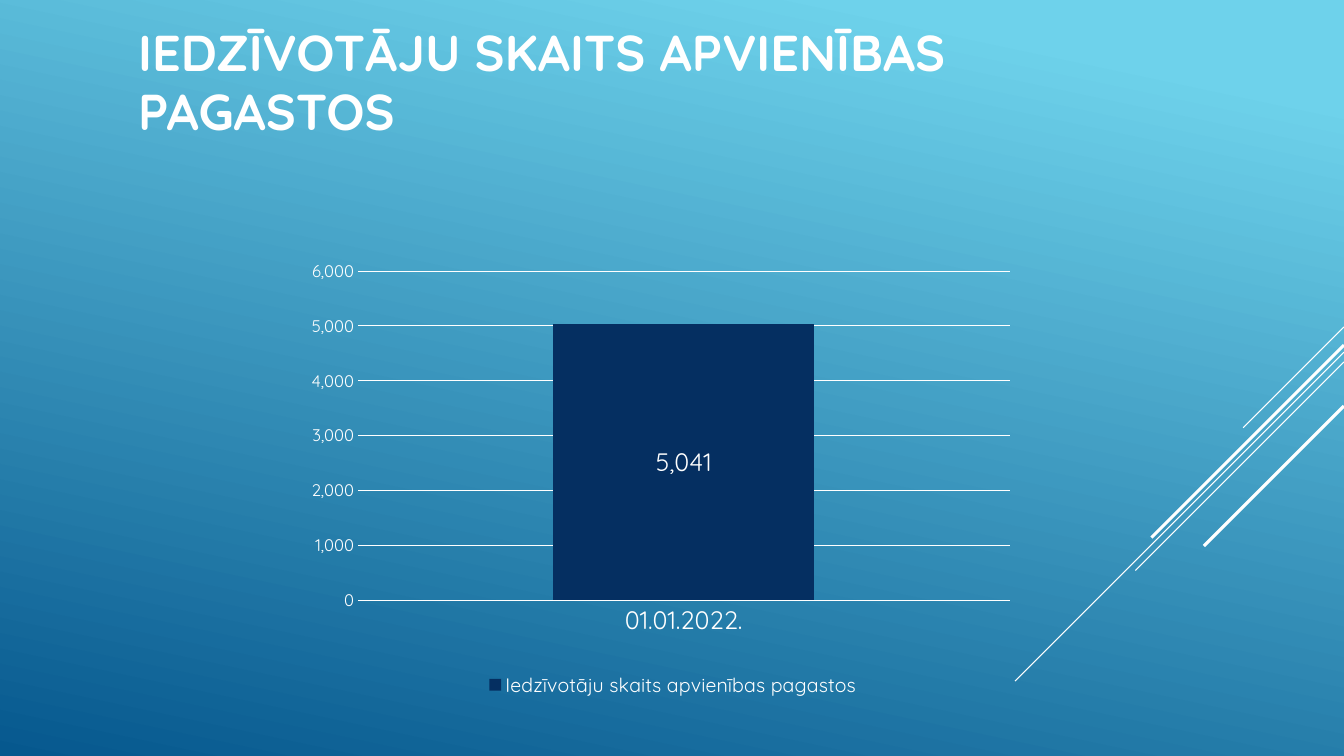
from lxml import etree
from pptx import Presentation
from pptx import util as u
from pptx.chart import data as chart_data
from pptx.dml import color
from pptx.enum import chart as charts, shapes, text
from pptx.oxml import ns

WHITE, NAVY = "FFFFFF", "052F61"
WIDTH, HEIGHT = 960, 540


def rgb(value):
    return color.RGBColor.from_string(value)


class SlideBuilder:
    """Holds the slide and its style, and adds each kind of element."""

    def __init__(self, slide, font="Quicksand"):
        self.slide = slide
        self.font = font

    def format_font(self, font, size, **extra):
        values = {"name": self.font, "size": u.Pt(size), "bold": False, **extra}
        for key, value in values.items():
            setattr(font, key, value)
        font.color.rgb = rgb(WHITE)

    def background(self, stops, angle):
        fill = self.slide.background.fill
        fill.gradient()
        fill.gradient_angle = angle
        for stop, (position, value) in zip(fill.gradient_stops, stops):
            stop.position = position
            stop.color.rgb = rgb(value)

    def title(self, wording, left, top, width, height):
        shape = self.slide.shapes.title
        box = {"left": left, "top": top, "width": width, "height": height}
        for key, value in box.items():
            setattr(shape, key, u.Pt(value))
        frame = shape.text_frame
        frame.text = wording
        frame.word_wrap = True
        frame.auto_size = text.MSO_AUTO_SIZE.NONE
        frame.vertical_anchor = text.MSO_ANCHOR.MIDDLE
        paragraph = frame.paragraphs[0]
        paragraph.alignment = text.PP_ALIGN.LEFT
        paragraph.line_spacing = 0.97
        self.format_font(paragraph.runs[0].font, 36, bold=True)

    def diagonal(self, top, reach, weight):
        """A 45 degree line running down and left from the right edge."""
        points = (WIDTH, top, WIDTH - reach, top + reach)
        line = self.slide.shapes.add_connector(
            shapes.MSO_CONNECTOR.STRAIGHT, *map(u.Pt, points))
        line.line.color.rgb = rgb(WHITE)
        line.line.width = u.Pt(weight)
        etree.SubElement(line._element.spPr, ns.qn("a:effectLst"))

    def column_chart(self, name, categories, values, box, plot_area):
        data = chart_data.CategoryChartData(number_format="#,##0")
        data.categories = categories
        data.add_series(name, values)
        chart = self.slide.shapes.add_chart(
            charts.XL_CHART_TYPE.COLUMN_STACKED, *map(u.Pt, box), data).chart
        chart.has_title = False
        self.format_font(chart.font, 10)

        # Columns and their labels
        plot = chart.plots[0]
        plot.gap_width, plot.overlap = 150, 100
        plot.vary_by_categories = False
        series = plot.series[0]
        series.format.fill.solid()
        series.format.fill.fore_color.rgb = rgb(NAVY)
        labels = series.data_labels
        label_format = {"show_value": True, "number_format": "#,##0",
                        "number_format_is_linked": False,
                        "position": charts.XL_LABEL_POSITION.CENTER}
        for key, value in label_format.items():
            setattr(labels, key, value)
        self.format_font(labels.font, 18)

        # Axes and gridlines
        for axis, size in ((chart.category_axis, 18), (chart.value_axis, 12)):
            axis.major_tick_mark = axis.minor_tick_mark = charts.XL_TICK_MARK.NONE
            self.format_font(axis.tick_labels.font, size)
        value_axis = chart.value_axis
        value_axis.minimum_scale = 0
        value_axis.has_major_gridlines = True
        value_axis.format.line.fill.background()
        value_axis.tick_labels.number_format = "#,##0"
        value_axis.tick_labels.number_format_is_linked = False
        for part in (chart.category_axis, value_axis.major_gridlines):
            part.format.line.color.rgb = rgb(WHITE)
            part.format.line.width = u.Pt(0.75)

        # Legend
        chart.has_legend = True
        chart.legend.position = charts.XL_LEGEND_POSITION.BOTTOM
        chart.legend.include_in_layout = False
        self.format_font(chart.legend.font, 14)
        self.place_plot(chart, plot_area)

    def place_plot(self, chart, fractions):
        area = chart._chartSpace.find(".//" + ns.qn("c:plotArea"))
        for old in area.findall(ns.qn("c:layout")):
            area.remove(old)
        layout = etree.Element(ns.qn("c:layout"))
        area.insert(0, layout)
        manual = etree.SubElement(layout, ns.qn("c:manualLayout"))
        settings = {"layoutTarget": "inner", "xMode": "edge", "yMode": "edge",
                    **dict(zip("xywh", fractions))}
        for tag, value in settings.items():
            etree.SubElement(manual, ns.qn("c:" + tag)).set("val", str(value))


def main():
    presentation = Presentation()
    presentation.slide_width, presentation.slide_height = u.Pt(WIDTH), u.Pt(HEIGHT)
    slide = presentation.slides.add_slide(presentation.slide_layouts[5])
    builder = SlideBuilder(slide)

    # Background and diagonal lines: top, reach, weight
    builder.background([(0.1, "6ED2EB"), (1, "06588E")], 258)
    for line in ((233.5, 72, 0.75), (251.5, 235, 0.75), (258.5, 149, 0.75),
                 (246.5, 137.5, 2.25), (290, 100, 2.25)):
        builder.diagonal(*line)

    # Title and chart
    builder.title("IEDZĪVOTĀJU SKAITS APVIENĪBAS PAGASTOS", 91.5, 0, 777.5, 119)
    builder.column_chart("Iedzīvotāju skaits apvienības pagastos",
                         ["01.01.2022."], [5041],
                         box=(222.5, 139.5, 514, 361.5),
                         plot_area=(0.06, 0.15, 0.91, 0.65))
    presentation.save("out.pptx")


if __name__ == "__main__":
    main()
